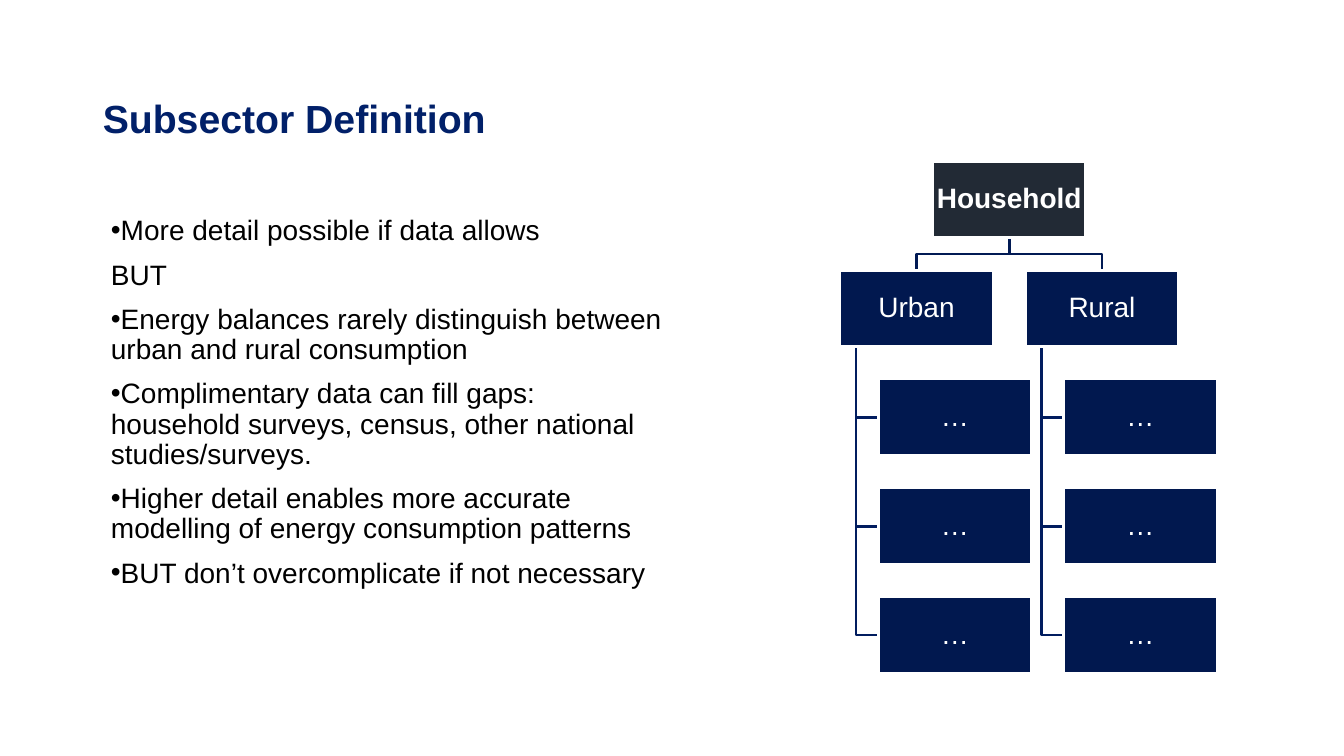
from lxml import etree
from pptx import Presentation
from pptx.dml.color import RGBColor
from pptx.enum.shapes import MSO_SHAPE
from pptx.enum.text import MSO_ANCHOR, MSO_AUTO_SIZE, PP_ALIGN
from pptx.oxml.ns import qn
from pptx.util import Inches, Pt

RECTANGLE = MSO_SHAPE.RECTANGLE
BOTTOM, MIDDLE, TOP = MSO_ANCHOR.BOTTOM, MSO_ANCHOR.MIDDLE, MSO_ANCHOR.TOP
LEFT, CENTER = PP_ALIGN.LEFT, PP_ALIGN.CENTER
NO_AUTOFIT = MSO_AUTO_SIZE.NONE

TITLE_BLUE = RGBColor(0x01, 0x20, 0x69)
BOX_NAVY = RGBColor(0x01, 0x18, 0x4F)
ROOT_GREY = RGBColor(0x22, 0x2A, 0x35)
BRANCH_BLUE = RGBColor(0x01, 0x1A, 0x54)
LEAF_BLUE = RGBColor(0x01, 0x1D, 0x5F)
BLACK = RGBColor(0, 0, 0)
WHITE = RGBColor(0xFF, 0xFF, 0xFF)

# Each entry: text, has a bullet
POINTS = [
    ("More detail possible if data allows", True),
    ("BUT", False),
    ("Energy balances rarely distinguish between urban and rural consumption", True),
    ("Complimentary data can fill gaps: household surveys, census, other "
     "national studies/surveys.", True),
    ("Higher detail enables more accurate modelling of energy consumption patterns", True),
    ("BUT don’t overcomplicate if not necessary", True),
]

# Tree geometry in inches
BOX_WIDTH, BOX_HEIGHT = 1.52, 0.76
TREE_TOP, LEVEL_STEP = 1.6, 1.08
ROOT_LEFT = 9.25
BRANCHES = {"Urban": 8.33, "Rural": 10.17}
LEAF_INDENT, STEM_INDENT = 0.38, 0.16
LEAF_LEVELS = (2, 3, 4)


def level_top(level):
    return TREE_TOP + level * LEVEL_STEP


def set_all(target, values):
    for name, value in values.items():
        setattr(target, name, value)


class SlideBuilder:
    font_name = "Arial"
    line_width = Pt(2)

    def __init__(self, page):
        self.page = page

    def place(self, shape, left, top, width, height):
        set_all(shape, {"left": Inches(left), "top": Inches(top),
                        "width": Inches(width), "height": Inches(height)})

    def frame(self, shape, anchor, margins):
        names = ("margin_left", "margin_top", "margin_right", "margin_bottom")
        values = {name: Inches(size) for name, size in zip(names, margins)}
        set_all(shape.text_frame, {"word_wrap": True, "auto_size": NO_AUTOFIT,
                                   "vertical_anchor": anchor, **values})

    def add_text(self, para, text, size, color, bold=False, align=LEFT):
        set_all(para, {"alignment": align, "line_spacing": 0.9, "space_before": Pt(0)})
        span = para.add_run()
        span.text = text
        set_all(span.font, {"name": self.font_name, "size": Pt(size), "bold": bold})
        span.font.color.rgb = color

    def bullet(self, para, shown):
        props = para._p.get_or_add_pPr()
        props.set("marL", str(Inches(0.08)))
        props.set("indent", "0")
        if not shown:
            etree.SubElement(props, qn("a:buNone"))
            return
        color = etree.SubElement(props, qn("a:buClr"))
        etree.SubElement(color, qn("a:srgbClr"), val=str(BLACK))
        etree.SubElement(props, qn("a:buFont"), typeface=self.font_name)
        etree.SubElement(props, qn("a:buChar"), char="•")

    def title(self, text):
        shape = self.page.shapes.title
        self.place(shape, 0.92, 0.01, 11.5, 1.45)
        self.frame(shape, BOTTOM, (0.1, 0.05, 0.1, 0.05))
        self.add_text(shape.text_frame.paragraphs[0], text, 28, TITLE_BLUE, bold=True)

    def points(self, items):
        shape = self.page.placeholders[1]
        self.place(shape, 0.92, 2.11, 5.75, 5.07)
        self.frame(shape, TOP, (0.1, 0.04, 0.1, 0.1))
        for index, (text, bulleted) in enumerate(items):
            frame = shape.text_frame
            para = frame.add_paragraph() if index else frame.paragraphs[0]
            self.bullet(para, bulleted)
            self.add_text(para, text, 20, BLACK)
            if index:
                para.space_before = Pt(10)

    def elbow(self, corners, color):
        start, *rest = [(Inches(x), Inches(y)) for x, y in corners]
        outline = self.page.shapes.build_freeform(*start)
        outline.add_line_segments(rest, close=False)
        shape = outline.convert_to_shape()
        shape.shadow.inherit = False
        shape.fill.background()
        shape.line.color.rgb = color
        shape.line.width = self.line_width

    def box(self, text, left, top, fill=BOX_NAVY, bold=False):
        shape = self.page.shapes.add_shape(
            RECTANGLE, Inches(left), Inches(top), Inches(BOX_WIDTH), Inches(BOX_HEIGHT))
        shape.shadow.inherit = False
        shape.fill.solid()
        shape.fill.fore_color.rgb = fill
        shape.line.color.rgb = WHITE
        shape.line.width = self.line_width
        self.frame(shape, MIDDLE, (0.01,) * 4)
        self.add_text(shape.text_frame.paragraphs[0], text, 20, WHITE, bold, CENTER)


def draw_tree(builder):
    branch_top = level_top(1)
    root_bottom = TREE_TOP + BOX_HEIGHT
    root_center = ROOT_LEFT + BOX_WIDTH / 2
    fork = (root_bottom + branch_top) / 2

    # Connecting lines, behind the boxes
    for left in BRANCHES.values():
        stem, center = left + STEM_INDENT, left + BOX_WIDTH / 2
        for level in reversed(LEAF_LEVELS):
            middle = level_top(level) + BOX_HEIGHT / 2
            builder.elbow([(stem, branch_top + BOX_HEIGHT), (stem, middle),
                           (left + LEAF_INDENT, middle)], LEAF_BLUE)
        builder.elbow([(root_center, root_bottom), (root_center, fork),
                       (center, fork), (center, branch_top)], BRANCH_BLUE)

    # Boxes
    builder.box("Household", ROOT_LEFT, TREE_TOP, ROOT_GREY, bold=True)
    for name, left in BRANCHES.items():
        builder.box(name, left, branch_top)
        for level in LEAF_LEVELS:
            builder.box("…", left + LEAF_INDENT, level_top(level))


def main():
    deck = Presentation()
    set_all(deck, {"slide_width": Inches(13.33), "slide_height": Inches(7.5)})
    page = deck.slides.add_slide(deck.slide_layouts[1])
    builder = SlideBuilder(page)
    builder.title("Subsector Definition")
    builder.points(POINTS)
    draw_tree(builder)
    deck.save("out.pptx")


if __name__ == "__main__":
    main()
